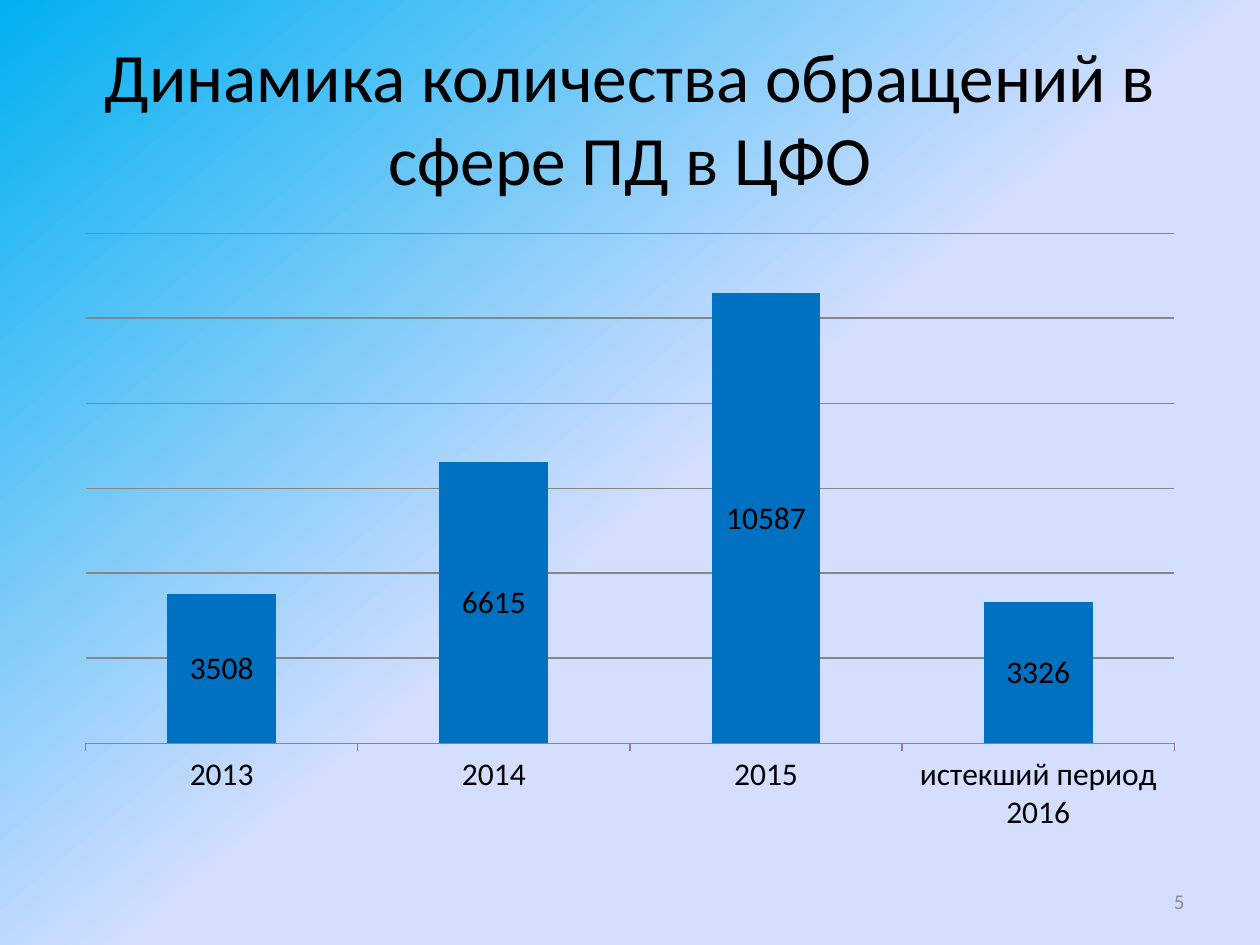
from copy import deepcopy

from pptx import Presentation
from pptx.chart.data import CategoryChartData
from pptx.dml.color import RGBColor
from pptx.enum.chart import XL_CHART_TYPE as ChartType, XL_LABEL_POSITION as LabelPosition
from pptx.enum.chart import XL_TICK_LABEL_POSITION as TickLabels, XL_TICK_MARK as TickMark
from pptx.enum.text import MSO_ANCHOR as Anchor, PP_ALIGN as Align
from pptx.util import Cm, Pt

FONT = "Calibri"
HEADING = "Динамика количества обращений в сфере ПД в ЦФО"
PAGE_NUMBER = "5"
APPEALS = {"2013": 3508, "2014": 6615, "2015": 10587, "истекший период 2016": 3326}
BACKDROP = [(0, "00B0F0"), (0.53, "D4DEFF"), (1, "D4DEFF")]

HEADING_BOX = (1.27, 0.76, 22.86, 3.18)
CHART_BOX = (1.27, 4.45, 22.86, 12.57)
PAGE_NUMBER_BOX = (18.21, 17.65, 5.92, 1.02)


def paint(color_format, hex_color):
    color_format.rgb = RGBColor.from_string(hex_color)


def style(font, size, hex_color):
    font.name = FONT
    font.size = Pt(size)
    paint(font.color, hex_color)


def add_text(slide, box, words, size, hex_color, align):
    frame = slide.shapes.add_textbox(*map(Cm, box)).text_frame
    frame.word_wrap = True
    frame.vertical_anchor = Anchor.MIDDLE
    paragraph = frame.paragraphs[0]
    paragraph.text = words
    paragraph.alignment = align
    style(paragraph.runs[0].font, size, hex_color)


def add_backdrop(slide):
    fill = slide.background.fill
    fill.gradient()
    fill.gradient_angle = 310
    stop_list = slide.element.xpath(".//a:gsLst")[0]
    stop_list.append(deepcopy(stop_list[-1]))
    for stop, (position, hex_color) in zip(fill.gradient_stops, BACKDROP):
        stop.position = position
        paint(stop.color, hex_color)


def add_appeals_chart(slide):
    data = CategoryChartData()
    data.categories = list(APPEALS)
    data.add_series("Series 1", list(APPEALS.values()))
    chart = slide.shapes.add_chart(
        ChartType.COLUMN_STACKED, *map(Cm, CHART_BOX), data
    ).chart
    chart.has_legend = False
    chart.has_title = False
    style(chart.font, 18, "000000")

    years = chart.category_axis
    years.major_tick_mark = TickMark.OUTSIDE
    years.tick_label_position = TickLabels.LOW
    counts = chart.value_axis
    counts.minimum_scale, counts.maximum_scale, counts.major_unit = 0, 12000, 2000
    counts.has_major_gridlines = True
    counts.visible = False
    for line in (years.format.line, counts.major_gridlines.format.line):
        line.width = Pt(0.75)
        paint(line.color, "868686")

    plot = chart.plots[0]
    plot.gap_width = 150
    plot.overlap = 100
    plot.vary_by_categories = False
    columns = plot.series[0].format.fill
    columns.solid()
    paint(columns.fore_color, "0070C0")
    plot.has_data_labels = True
    labels = plot.data_labels
    labels.show_value = True
    labels.position = LabelPosition.CENTER
    style(labels.font, 18, "000000")


def main():
    deck = Presentation()
    deck.slide_width, deck.slide_height = Cm(25.4), Cm(19.05)
    slide = deck.slides.add_slide(deck.slide_layouts[6])
    add_backdrop(slide)
    add_text(slide, HEADING_BOX, HEADING, 39.6, "000000", Align.CENTER)
    add_appeals_chart(slide)
    add_text(slide, PAGE_NUMBER_BOX, PAGE_NUMBER, 12, "8C8C8C", Align.RIGHT)
    deck.save("out.pptx")


if __name__ == "__main__":
    main()
